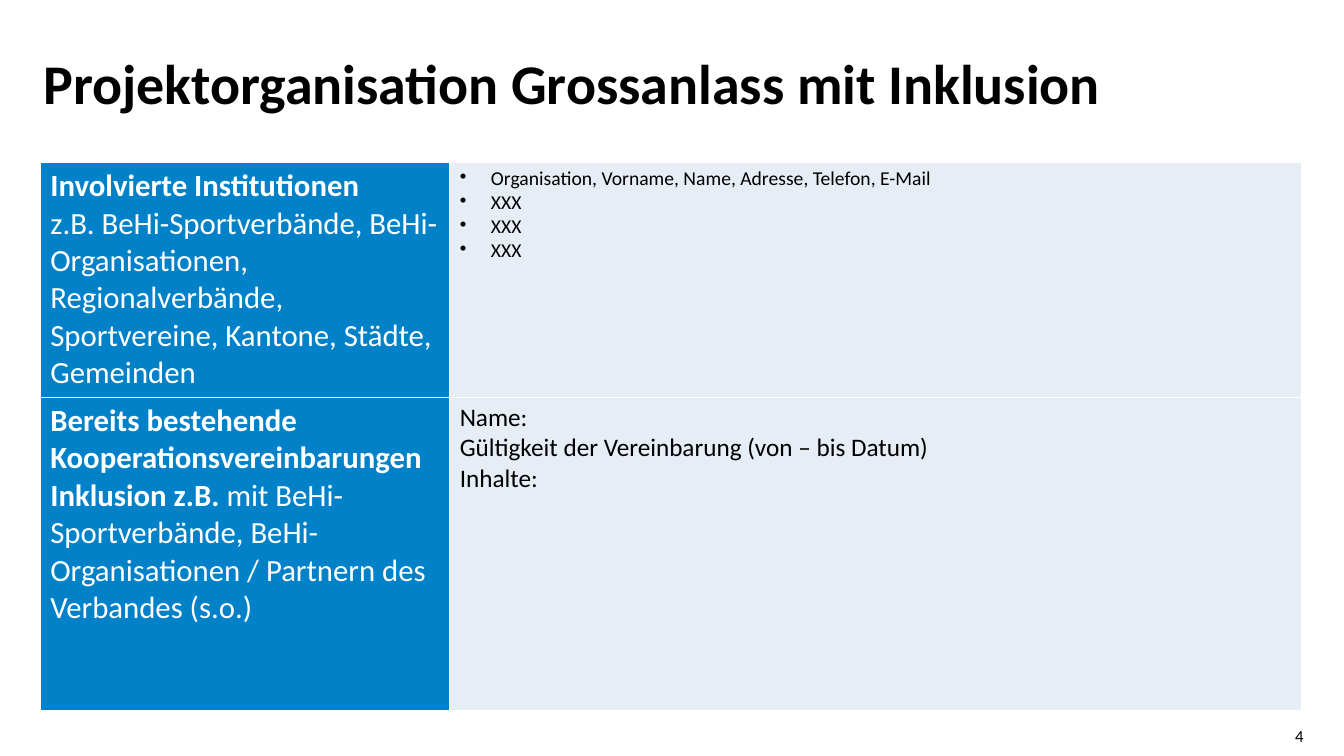
import pptx
import pptx.dml.color
import pptx.enum.text
import pptx.oxml
import pptx.oxml.ns
import pptx.util
from pptx.util import Inches

BLACK = pptx.dml.color.RGBColor(0x00, 0x00, 0x00)
WHITE = pptx.dml.color.RGBColor(0xFF, 0xFF, 0xFF)
BLUE = pptx.dml.color.RGBColor(0x00, 0x81, 0xC8)
PALE = pptx.dml.color.RGBColor(0xE7, 0xED, 0xF5)


class SlideBuilder:
    font_name = "Calibri"

    def __init__(self, presentation):
        self.slide = presentation.slides.add_slide(presentation.slide_layouts[6])

    def style(self, paragraph, size, color):
        paragraph.font.name = self.font_name
        paragraph.font.size = pptx.util.Pt(size)
        paragraph.font.color.rgb = color

    def text(self, left, top, width, height, content, size):
        box = self.slide.shapes.add_textbox(
            Inches(left), Inches(top), Inches(width), Inches(height)
        )
        frame = box.text_frame
        frame.word_wrap = True
        frame.margin_left = frame.margin_right = 0
        frame.margin_top = frame.margin_bottom = 0
        paragraph = frame.paragraphs[0]
        paragraph.text = content
        self.style(paragraph, size, BLACK)
        return frame

    def table(self, left, top, widths, heights):
        frame = self.slide.shapes.add_table(
            len(heights), len(widths), Inches(left), Inches(top),
            Inches(sum(widths)), Inches(sum(heights)),
        )
        table = frame.table
        table.first_row = table.horz_banding = False
        for column, width in zip(table.columns, widths):
            column.width = Inches(width)
        for row, height in zip(table.rows, heights):
            row.height = Inches(height)
        return table

    def cell(self, cell, fill):
        properties = cell._tc.get_or_add_tcPr()
        for side in ("lnL", "lnR", "lnT", "lnB"):
            properties.append(pptx.oxml.parse_xml(
                f'<a:{side} {pptx.oxml.ns.nsdecls("a")} w="12700"><a:solidFill>'
                f'<a:srgbClr val="{WHITE}"/></a:solidFill></a:{side}>'
            ))
        cell.fill.solid()
        cell.fill.fore_color.rgb = fill

    def label(self, cell, heading, detail, line_break):
        self.cell(cell, BLUE)
        paragraph = cell.text_frame.paragraphs[0]
        run = paragraph.add_run()
        run.text = heading
        run.font.bold = True
        if line_break:
            paragraph.add_line_break()
        run = paragraph.add_run()
        run.text = detail
        run.font.bold = False
        self.style(paragraph, 22, WHITE)

    def entries(self, cell, lines, size, bulleted=False):
        self.cell(cell, PALE)
        cell.text_frame.text = "\n".join(lines)
        for paragraph in cell.text_frame.paragraphs:
            if bulleted:
                properties = paragraph._p.get_or_add_pPr()
                properties.set("marL", str(Inches(0.31)))
                properties.set("indent", str(-Inches(0.31)))
                properties.append(pptx.oxml.parse_xml(
                    f'<a:buChar {pptx.oxml.ns.nsdecls("a")} char="•"/>'
                ))
            self.style(paragraph, size, BLACK)


def main():
    presentation = pptx.Presentation()
    presentation.slide_width = Inches(13.33)
    presentation.slide_height = Inches(7.5)
    builder = SlideBuilder(presentation)

    title = builder.text(
        0.43, 0.56, 10.65, 0.85, "Projektorganisation Grossanlass mit Inklusion", 40
    )
    title.paragraphs[0].font.bold = True
    title.paragraphs[0].line_spacing = 0.9

    table = builder.table(0.4, 1.61, [4.06, 8.45], [2.33, 3.11])
    builder.label(
        table.cell(0, 0),
        "Involvierte Institutionen ",
        "z.B. BeHi-Sportverbände, BeHi-Organisationen, Regionalverbände, "
        "Sportvereine, Kantone, Städte, Gemeinden",
        line_break=True,
    )
    builder.entries(
        table.cell(0, 1),
        ["Organisation, Vorname, Name, Adresse, Telefon, E-Mail"] + ["XXX"] * 3,
        14,
        bulleted=True,
    )
    builder.label(
        table.cell(1, 0),
        "Bereits bestehende Kooperationsvereinbarungen Inklusion z.B. ",
        "mit BeHi-Sportverbände, BeHi-Organisationen / Partnern des Verbandes (s.o.)",
        line_break=False,
    )
    builder.entries(
        table.cell(1, 1),
        ["Name: \vGültigkeit der Vereinbarung (von – bis Datum)", "Inhalte:"],
        18,
    )

    number = builder.text(12.46, 7.2, 0.47, 0.2, "4", 12)
    number.vertical_anchor = pptx.enum.text.MSO_ANCHOR.MIDDLE
    number.paragraphs[0].alignment = pptx.enum.text.PP_ALIGN.RIGHT

    presentation.save("out.pptx")


if __name__ == "__main__":
    main()
